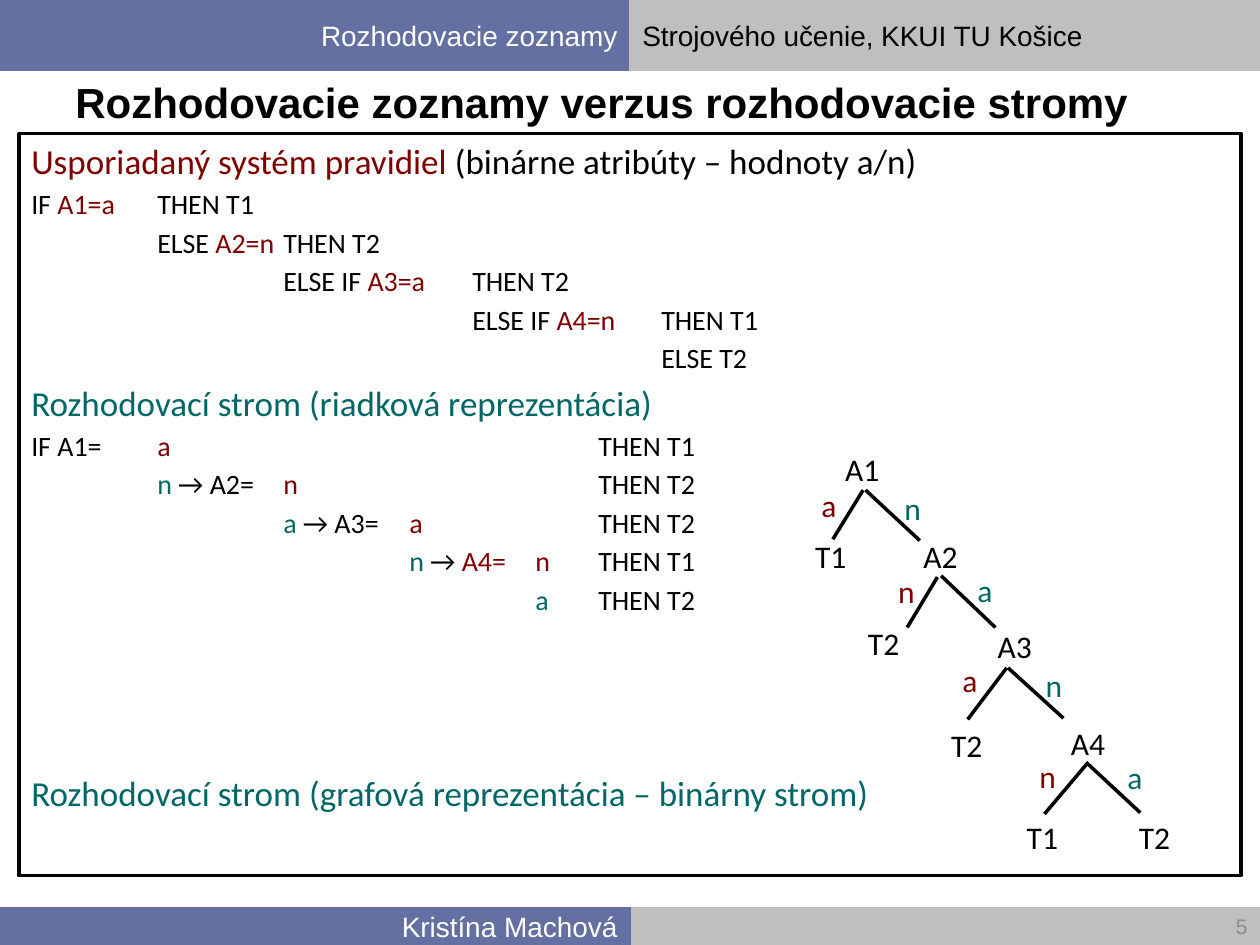
import pptx
import pptx.util
import pptx.dml.color
import pptx.enum.shapes
import pptx.enum.text
import pptx.oxml
import lxml.etree

Inches, Pt = pptx.util.Inches, pptx.util.Pt
ALIGN = pptx.enum.text.PP_ALIGN
ANCHOR = pptx.enum.text.MSO_ANCHOR
RECT = pptx.enum.shapes.MSO_SHAPE.RECTANGLE
LINE = pptx.enum.shapes.MSO_CONNECTOR.STRAIGHT

THEME = {
    "ink": "000000", "red": "7E0000", "teal": "006666", "white": "FFFFFF",
    "blue": "6570A2", "gray": "BFBFBF", "dim": "8C8C8C",
    "head": "Arial", "body": "Calibri",
    "title": 24, "topic": 20, "node": 18, "bar": 16, "rule": 16, "page": 12,
}

# left, top, height, fill, text, text colour, alignment
BARS = [
    (5, 7.2, 0.3, "gray", "", "ink", ALIGN.LEFT),
    (0, 0, 0.56, "blue", "Rozhodovacie zoznamy", "white", ALIGN.RIGHT),
    (5, 0, 0.56, "gray", "Strojového učenie, KKUI TU Košice", "ink", ALIGN.LEFT),
    (0, 7.2, 0.3, "blue", "Kristína Machová", "white", ALIGN.RIGHT),
]
TITLE = "Rozhodovacie zoznamy verzus rozhodovacie stromy"

# size, space before in points, cells: (tab position in inches, runs)
LINES = [
    ("topic", 0, [(0, [("Usporiadaný systém pravidiel ", "red"),
                       ("(binárne atribúty – hodnoty a/n)", "ink")])]),
    ("rule", 2.8, [(0, [("IF ", "ink"), ("A1=a", "red")]), (1, [("THEN T1", "ink")])]),
    ("rule", 2.8, [(1, [("ELSE ", "ink"), ("A2=n", "red")]), (2, [("THEN T2", "ink")])]),
    ("rule", 2.8, [(2, [("ELSE IF ", "ink"), ("A3=a", "red")]), (3.5, [("THEN T2", "ink")])]),
    ("rule", 2.8, [(3.5, [("ELSE IF ", "ink"), ("A4=n", "red")]), (5, [("THEN T1", "ink")])]),
    ("rule", 2.8, [(5, [("ELSE T2", "ink")])]),
    ("topic", 4, [(0, [("Rozhodovací strom (riadková reprezentácia)", "teal")])]),
    ("rule", 2.8, [(0, [("IF A1=", "ink")]), (1, [("a", "red")]), (4.5, [("THEN T1", "ink")])]),
    ("rule", 2.8, [(1, [("n ", "teal"), ("→ A2=", "ink")]), (2, [("n", "red")]),
                   (4.5, [("THEN T2", "ink")])]),
    ("rule", 2.8, [(2, [("a ", "teal"), ("→ A3=", "ink")]), (3, [("a", "red")]),
                   (4.5, [("THEN T2", "ink")])]),
    ("rule", 2.8, [(3, [("n ", "teal"), ("→ ", "ink"), ("A4=", "red")]), (4, [("n", "red")]),
                   (4.5, [("THEN T1", "ink")])]),
    ("rule", 2.8, [(4, [("a", "teal")]), (4.5, [("THEN T2", "ink")])]),
    ("topic", 89, [(0, [("Rozhodovací strom (grafová reprezentácia – binárny strom)", "teal")])]),
]

# text, left, top
NODES = [
    ("A1", 6.61, 3.52), ("A2", 7.23, 4.21), ("A3", 7.82, 4.93), ("A4", 8.4, 5.7),
    ("T1", 6.37, 4.21), ("T2", 6.79, 4.9), ("T2", 7.45, 5.71),
    ("T1", 8.05, 6.44), ("T2", 8.94, 6.44),
]
# label, colour, label left and top, line start, line end
EDGES = [
    ("a", "red", (6.42, 3.81), (6.85, 3.89), (6.61, 4.28)),
    ("n", "teal", (7.08, 3.83), (6.87, 3.89), (7.3, 4.29)),
    ("n", "red", (7.03, 4.49), (7.44, 4.58), (7.2, 4.98)),
    ("a", "teal", (7.66, 4.48), (7.47, 4.57), (7.9, 4.98)),
    ("a", "red", (7.54, 5.2), (7.99, 5.3), (7.68, 5.71)),
    ("n", "teal", (8.2, 5.24), (8, 5.3), (8.44, 5.7)),
    ("n", "red", (8.15, 5.96), (8.62, 6.07), (8.29, 6.46)),
    ("a", "teal", (8.85, 5.97), (8.62, 6.05), (9.05, 6.45)),
]


def color(name):
    return pptx.dml.color.RGBColor.from_string(THEME[name])


def add_run(para, text, size, hue, face="body", bold=False):
    run = para.add_run()
    run.text = text
    run.font.size = Pt(THEME[size])
    run.font.name = THEME[face]
    run.font.bold = bold
    run.font.color.rgb = color(hue)


def add_box(slide, place, fill, edge, width):
    box = slide.shapes.add_shape(RECT, *map(Inches, place))
    box.shadow.inherit = False
    box.fill.solid()
    box.fill.fore_color.rgb = color(fill)
    box.line.color.rgb = color(edge)
    box.line.width = Pt(width)
    return box


def add_label(slide, place, text, size, hue, face="body", bold=False,
              align=ALIGN.LEFT, anchor=ANCHOR.TOP, wrap=False):
    frame = slide.shapes.add_textbox(*map(Inches, place)).text_frame
    frame.word_wrap = wrap
    frame.vertical_anchor = anchor
    para = frame.paragraphs[0]
    para.alignment = align
    add_run(para, text, size, hue, face, bold)


def add_edge(slide, start, end):
    edge = slide.shapes.add_connector(LINE, *map(Inches, start + end))
    edge.line.color.rgb = color("ink")
    edge.line.width = Pt(2)
    lxml.etree.SubElement(edge._element.spPr, pptx.oxml.ns.qn("a:effectLst"))


def set_tabs(para, stops):
    tabs = lxml.etree.SubElement(para._p.get_or_add_pPr(), pptx.oxml.ns.qn("a:tabLst"))
    for stop in stops:
        lxml.etree.SubElement(tabs, pptx.oxml.ns.qn("a:tab"), pos=str(Inches(stop)), algn="l")


def fill_body(frame):
    """Write the rules, each cell at its own tab stop."""
    frame.word_wrap = True
    frame.vertical_anchor = ANCHOR.TOP
    for row, (size, gap, cells) in enumerate(LINES):
        para = frame.add_paragraph() if row else frame.paragraphs[0]
        para.alignment = ALIGN.LEFT
        para.space_before = Pt(gap)
        stops = [stop for stop, _ in cells if stop]
        if stops:
            set_tabs(para, stops)
        for stop, runs in cells:
            for i, (text, hue) in enumerate(runs):
                lead = "\t" if stop and i == 0 else ""
                add_run(para, lead + text, size, hue)


def main():
    deck = pptx.Presentation()
    deck.slide_width, deck.slide_height = Inches(10), Inches(7.5)
    slide = deck.slides.add_slide(deck.slide_layouts[6])

    for left, top, height, fill, text, hue, align in BARS:
        bar = add_box(slide, (left, top, 5, height), fill, fill, 0.75)
        if text:
            bar.text_frame.vertical_anchor = ANCHOR.MIDDLE
            para = bar.text_frame.paragraphs[0]
            para.alignment = align
            add_run(para, text, "bar", hue, "head")

    add_label(slide, (0.5, 0.56, 9, 0.5), TITLE, "title", "ink", "head", True,
              anchor=ANCHOR.MIDDLE, wrap=True)
    fill_body(add_box(slide, (0.15, 1.06, 9.7, 5.89), "white", "ink", 2).text_frame)
    add_label(slide, (6.58, 7.2, 3.42, 0.3), "5", "page", "dim", "head",
              align=ALIGN.RIGHT, anchor=ANCHOR.MIDDLE, wrap=True)

    for text, left, top in NODES:
        add_label(slide, (left, top, 0.48, 0.4), text, "node", "ink")
    for text, hue, spot, start, end in EDGES:
        add_edge(slide, start, end)
        add_label(slide, spot + (0.33, 0.4), text, "node", hue)

    deck.save("out.pptx")


if __name__ == "__main__":
    main()
